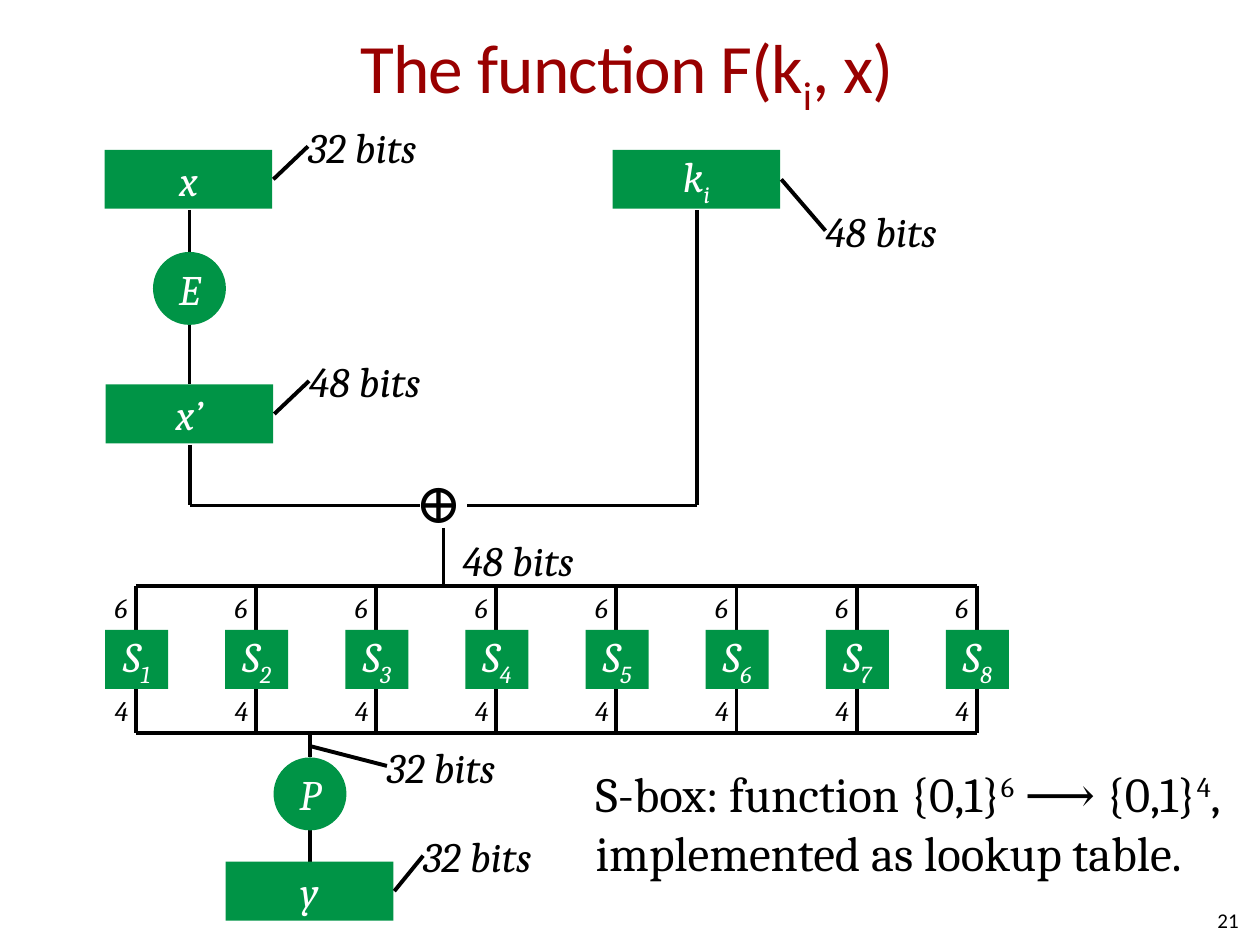
from pptx import Presentation
from pptx.dml.color import RGBColor
from pptx.enum.shapes import MSO_CONNECTOR, MSO_SHAPE
from pptx.enum.text import MSO_ANCHOR, PP_ALIGN
from pptx.oxml.ns import qn
from pptx.util import Cm, Pt

LINE = MSO_CONNECTOR.STRAIGHT
RECTANGLE, OVAL = MSO_SHAPE.RECTANGLE, MSO_SHAPE.OVAL
LEFT, CENTER, RIGHT = PP_ALIGN.LEFT, PP_ALIGN.CENTER, PP_ALIGN.RIGHT
TOP, MIDDLE = MSO_ANCHOR.TOP, MSO_ANCHOR.MIDDLE
GREEN, RED, BLACK, WHITE = "009446", "990000", "000000", "FFFFFF"
BLOCK_WIDTH, BLOCK_HEIGHT, CIRCLE_SIZE = 3.38, 1.19, 1.47
SUBSCRIPT, SUPERSCRIPT = -25000, 30000


def color(value):
    """Turn a hex string into a colour."""
    return RGBColor.from_string(value)


def write(shape, pieces, size, hue, align=LEFT, anchor=TOP, font="Cambria",
          italic=False, wrap=False, inset=0):
    """Fill a shape with one paragraph made of (text, baseline) pieces."""
    frame = shape.text_frame
    frame.margin_left = frame.margin_right = 0
    frame.margin_top = frame.margin_bottom = Cm(inset)
    frame.word_wrap = wrap
    frame.vertical_anchor = anchor
    paragraph = frame.paragraphs[0]
    paragraph.alignment = align
    paragraph.font.name = font
    paragraph.font.size = Pt(size)
    paragraph.font.italic = italic
    paragraph.font.color.rgb = color(hue)
    for text, baseline in pieces:
        if text == "\n":
            paragraph.add_line_break()
            continue
        run = paragraph.add_run()
        run.text = text
        if baseline:
            run.font._element.set("baseline", str(baseline))
    return paragraph


def add_text(slide, box, pieces, size, **style):
    """Add a black text box at (left, top, width, height)."""
    shape = slide.shapes.add_textbox(*map(Cm, box))
    write(shape, pieces, size, BLACK, **style)


def add_line(slide, *points):
    """Join successive points with straight lines."""
    for start, end in zip(points, points[1:]):
        line = slide.shapes.add_connector(LINE, *map(Cm, (*start, *end)))
        line.line.color.rgb = color(BLACK)
        line.line.width = Pt(2.25)
        properties = line._element.spPr
        properties.append(properties.makeelement(qn("a:effectLst"), {}))


def add_node(slide, kind, box, name, index=""):
    """Add a green node with an italic name and an optional subscript."""
    shape = slide.shapes.add_shape(kind, *map(Cm, box))
    shape.shadow.inherit = False
    shape.fill.solid()
    shape.fill.fore_color.rgb = color(GREEN)
    shape.line.fill.background()
    pieces = [(name, 0)] + ([(index, SUBSCRIPT)] if index else [])
    write(shape, pieces, 24, WHITE, CENTER, MIDDLE, italic=True)


def add_bits(slide, left, top, count):
    """Add a label that gives a width in bits."""
    add_text(slide, (left, top, 2.39, 1.02), [(f"{count} bits", 0)], 24, italic=True)


def add_block(slide, left, top, name, count, label_offset, index=""):
    """Add a register block with a leader line to its width in bits."""
    add_node(slide, RECTANGLE, (left, top, BLOCK_WIDTH, BLOCK_HEIGHT), name, index)
    label_left, label_top = left + label_offset[0], top + label_offset[1]
    add_bits(slide, label_left, label_top, count)
    add_line(slide, (label_left, label_top + 0.51),
             (left + BLOCK_WIDTH + 0.02, top + BLOCK_HEIGHT / 2))


def add_circle(slide, center, top, name, before, after):
    """Add a round step with the lines that enter and leave it."""
    bottom = top + CIRCLE_SIZE
    add_line(slide, (center, top - before), (center, top))
    add_line(slide, (center, bottom), (center, bottom + after))
    add_node(slide, OVAL, (center - CIRCLE_SIZE / 2, top, CIRCLE_SIZE, CIRCLE_SIZE), name)


def add_title(slide, box):
    """Place and format the title."""
    title = slide.shapes.title
    title.left, title.top, title.width, title.height = map(Cm, box)
    pieces = [("The function F(k", 0), ("i", SUBSCRIPT), (", x)", 0)]
    paragraph = write(title, pieces, 39.6, RED, CENTER, MIDDLE, "Calibri",
                      wrap=True, inset=0.13)
    for run in paragraph.runs:
        run.font._element.set("spc", "-50")


def add_expansion(slide, left, top):
    """Add the column that expands x to x’."""
    add_block(slide, left, top, "x", 32, (4.1, -0.58))
    add_circle(slide, left + 1.71, top + 2.06, "E", 0.85, 1.2)
    add_block(slide, left + 0.02, top + 4.73, "x’", 48, (4.1, -0.58))


def add_mixing(slide, left, top, width):
    """Add the lines that combine x’ and the key, and their result."""
    right, joint = left + width, top + 1.22
    add_line(slide, (left, top), (left, joint), (left + 4.63, joint))
    add_line(slide, (left + 5.59, joint), (right, joint), (right, top - 4.73))
    add_text(slide, (left + 4.55, top + 0.45, 1.14, 1.37), [("⊕", 0)], 32)
    add_line(slide, (left + 5.11, top + 1.67), (left + 5.11, top + 2.84))
    add_bits(slide, left + 5.49, top + 1.8, 48)


def add_boxes(slide, left, top, width, height, count=8):
    """Add the row of S-boxes between two rails."""
    bottom, box_top = top + height, top + (height - BLOCK_HEIGHT) / 2
    for rail in (top, bottom):
        add_line(slide, (left, rail), (left + width, rail))
    for number in range(count):
        center = left + number * width / (count - 1)
        add_line(slide, (center, top), (center, box_top))
        add_line(slide, (center, box_top + BLOCK_HEIGHT), (center, bottom))
        for digit, digit_top in (("6", top + 0.1), ("4", bottom - 0.79)):
            add_text(slide, (center - 0.43, digit_top, 0.3, 0.69), [(digit, 0)], 16,
                     italic=True)
        add_node(slide, RECTANGLE, (center - 0.62, box_top, 1.27, BLOCK_HEIGHT),
                 "S", str(number + 1))


def add_permutation(slide, center, top):
    """Add the step that permutes the S-box outputs into y."""
    add_line(slide, (center, top + 0.26), (center + 1.55, top + 0.66))
    add_bits(slide, center + 1.55, top + 0.16, 32)
    add_circle(slide, center, top + 0.49, "P", 0.49, 0.63)
    add_block(slide, center - 1.7, top + 2.59, "y", 32, (3.98, -0.63))


def main():
    """Build the slide and save it."""
    presentation = Presentation()
    presentation.slide_width, presentation.slide_height = Cm(25.4), Cm(19.05)
    slide = presentation.slides.add_slide(presentation.slide_layouts[5])
    add_title(slide, (0.84, 0.43, 23.6, 2.03))
    add_expansion(slide, 2.11, 3.02)
    add_block(slide, 12.35, 3.02, "k", 48, (4.29, 1.12), "i")
    add_mixing(slide, 3.83, 8.97, 10.22)
    add_boxes(slide, 2.74, 11.81, 16.95, 2.97)
    add_permutation(slide, 6.25, 14.78)
    add_text(slide, (12.01, 15.39, 13.56, 2.39), [
        ("S-box: function {0,1}", 0), ("6", SUPERSCRIPT), (" ⟶ {0,1}", 0),
        ("4", SUPERSCRIPT), (",", 0), ("\n", 0), ("implemented as lookup table.", 0)], 28)
    add_text(slide, (19.05, 18.03, 5.92, 1.02), [("21", 0)], 12, align=RIGHT,
             anchor=MIDDLE, font="Calibri", wrap=True)
    presentation.save("out.pptx")


if __name__ == "__main__":
    main()
